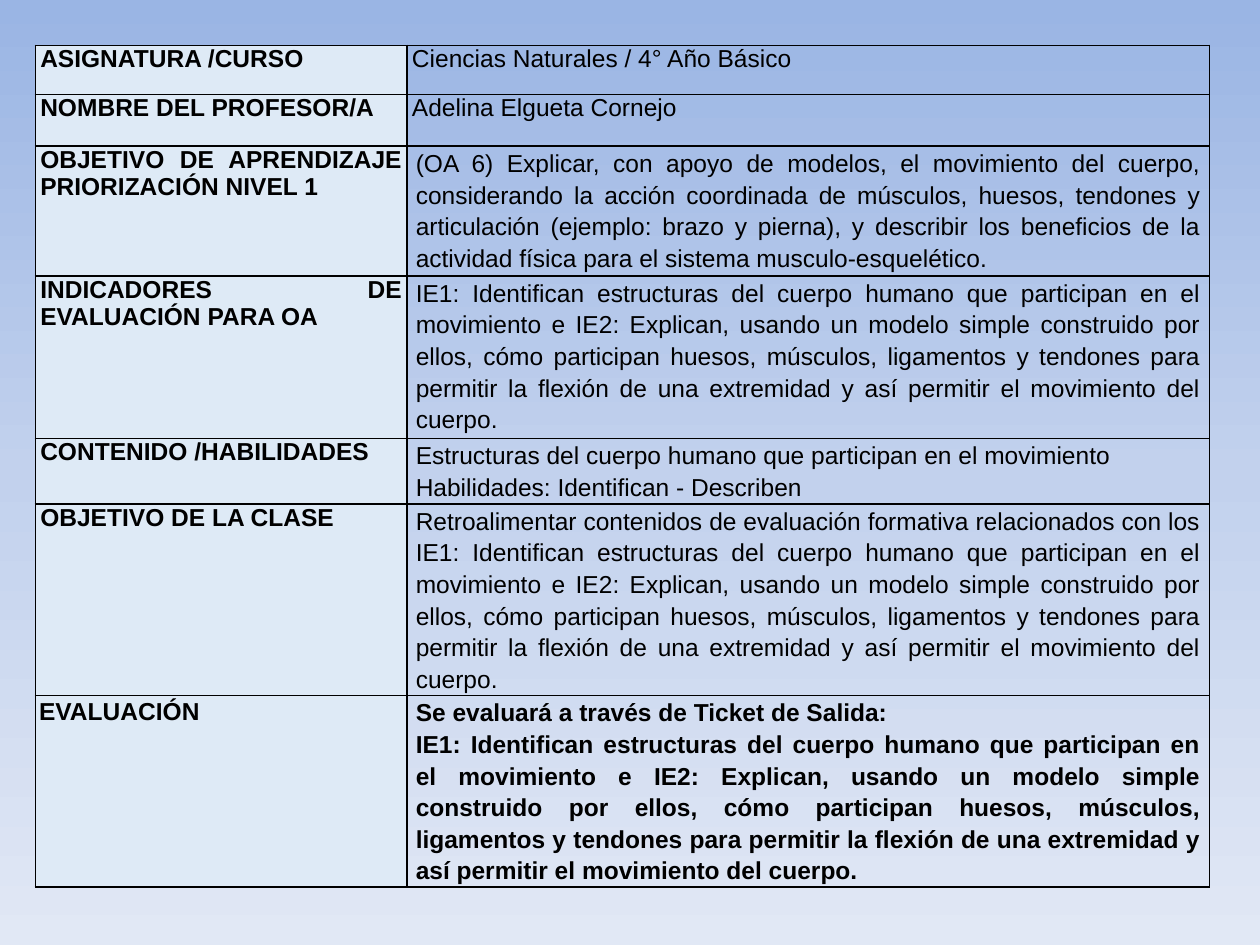
from copy import deepcopy
from dataclasses import dataclass

from lxml.etree import SubElement
from pptx import Presentation
from pptx.dml.color import RGBColor
from pptx.enum.text import PP_ALIGN
from pptx.oxml.ns import qn
from pptx.util import Inches, Pt

BLACK = "000000"
LABEL_FILL = "DEEAF6"
GRADIENT = [(0, "9AB5E4"), (0.5, "C2D1ED"), (1, "E1E8F5")]
COLUMN_WIDTHS = [2.95, 6.37]
INDICATORS = (
    "IE1: Identifican estructuras del cuerpo humano que participan en el movimiento "
    "e IE2: Explican, usando un modelo simple construido por ellos, cómo participan "
    "huesos, músculos, ligamentos y tendones para permitir la flexión de una extremidad "
    "y así permitir el movimiento del cuerpo."
)


@dataclass
class PlanRow:
    height: float
    label: str
    details: list[str]
    spacing: float = 1.15
    detail_inset: float = 0.07
    detail_bold: bool = False
    label_insets: tuple[float, float] = (0.04, 0)


ROWS = [
    PlanRow(0.39, "ASIGNATURA /CURSO", ["Ciencias Naturales / 4° Año Básico"], 1, 0.04),
    PlanRow(0.41, "NOMBRE DEL PROFESOR/A", ["Adelina Elgueta Cornejo"], 1, 0.04),
    PlanRow(1.03, "OBJETIVO DE APRENDIZAJE PRIORIZACIÓN NIVEL 1", [
        "(OA 6) Explicar, con apoyo de modelos, el movimiento del cuerpo, considerando "
        "la acción coordinada de músculos, huesos, tendones y articulación (ejemplo: "
        "brazo y pierna), y describir los beneficios de la actividad física para el "
        "sistema musculo-esquelético."]),
    PlanRow(1.29, "INDICADORES DE EVALUACIÓN PARA OA", [INDICATORS]),
    PlanRow(0.52, "CONTENIDO /HABILIDADES", [
        "Estructuras del cuerpo humano que participan en el movimiento",
        "Habilidades: Identifican - Describen"]),
    PlanRow(1.52, "OBJETIVO DE LA CLASE", [
        "Retroalimentar contenidos de evaluación formativa relacionados con los "
        + INDICATORS]),
    PlanRow(1.52, "EVALUACIÓN", ["Se evaluará a través de Ticket de Salida:", INDICATORS],
            detail_bold=True, label_insets=(0.03, 0.02)),
]


def color(value: str) -> RGBColor:
    """Turn a hex string into a colour."""
    return RGBColor.from_string(value)


def paint_background(s) -> None:
    """Fill the slide with the vertical three-stop gradient."""
    fill = s.background.fill
    fill.gradient()
    fill.gradient_angle = 270
    stops = s.element.find(f".//{qn('a:gsLst')}")
    stops.insert(1, deepcopy(stops[0]))
    for stop, (position, value) in zip(fill.gradient_stops, GRADIENT):
        stop.position = position
        stop.color.rgb = color(value)


def add_borders(cell) -> None:
    """Draw a thin black line on the four sides of a cell."""
    tc_pr = cell._tc.get_or_add_tcPr()
    for side in ("lnL", "lnR", "lnT", "lnB"):
        line = SubElement(tc_pr, qn(f"a:{side}"), w=str(Pt(1)))
        fill = SubElement(line, qn("a:solidFill"))
        SubElement(fill, qn("a:srgbClr"), val=str(color(BLACK)))


def fill_cell(cell, texts: list[str], bold: bool, spacing: float,
              insets: tuple[float, float], fill: str | None = None) -> None:
    """Write justified paragraphs in a bordered cell."""
    add_borders(cell)
    if fill:
        cell.fill.solid()
        cell.fill.fore_color.rgb = color(fill)
    else:
        cell.fill.background()
    side, end = insets
    margins = {"margin_left": side, "margin_right": side,
               "margin_top": end, "margin_bottom": end}
    for name, value in margins.items():
        setattr(cell, name, Inches(value))
    tf = cell.text_frame
    for i, text in enumerate(texts):
        p = tf.add_paragraph() if i else tf.paragraphs[0]
        p.alignment = PP_ALIGN.JUSTIFY
        p.line_spacing = spacing
        r = p.add_run()
        r.text = text
        for name, value in {"name": "Arial", "size": Pt(14), "bold": bold}.items():
            setattr(r.font, name, value)
        r.font.color.rgb = color(BLACK)


def add_plan_table(s, rows: list[PlanRow]) -> None:
    """Add the lesson plan table with one label and one detail per row."""
    table = s.shapes.add_table(
        len(rows), len(COLUMN_WIDTHS), Inches(0.28), Inches(0.36),
        Inches(sum(COLUMN_WIDTHS)), Inches(sum(row.height for row in rows))).table
    table.first_row = table.horz_banding = False
    for column, width in zip(table.columns, COLUMN_WIDTHS):
        column.width = Inches(width)
    for i, row in enumerate(rows):
        table.rows[i].height = Inches(row.height)
        fill_cell(table.cell(i, 0), [row.label], True, 1, row.label_insets, LABEL_FILL)
        fill_cell(table.cell(i, 1), row.details, row.detail_bold, row.spacing,
                  (row.detail_inset, 0))


def main() -> None:
    """Build and save the lesson plan slide."""
    prs = Presentation()
    prs.slide_width, prs.slide_height = Inches(10), Inches(7.5)
    s = prs.slides.add_slide(prs.slide_layouts[6])
    paint_background(s)
    add_plan_table(s, ROWS)
    prs.save("out.pptx")


if __name__ == "__main__":
    main()
